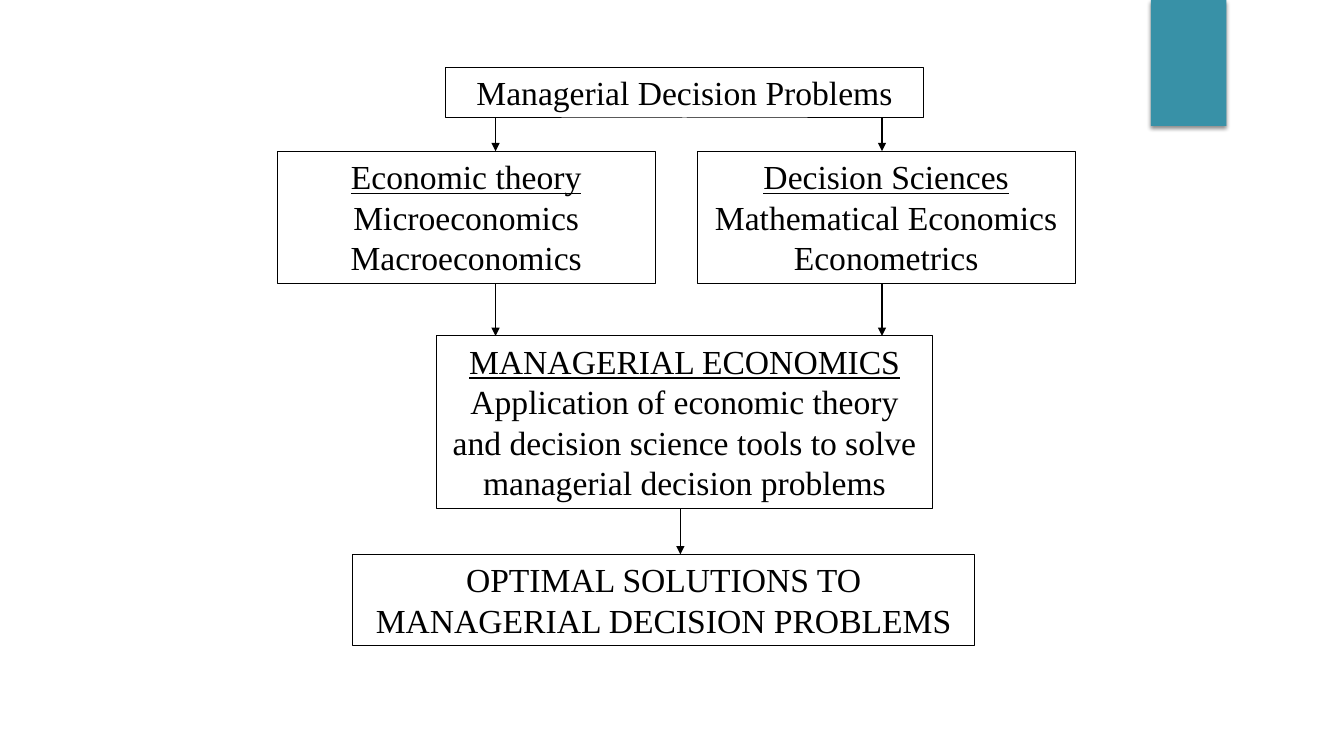
from dataclasses import dataclass

from lxml import etree
from pptx import Presentation
from pptx.dml.color import RGBColor
from pptx.enum.shapes import MSO_CONNECTOR, MSO_SHAPE
from pptx.enum.text import MSO_ANCHOR, MSO_AUTO_SIZE, PP_ALIGN
from pptx.oxml import parse_xml
from pptx.oxml.ns import nsdecls, qn
from pptx.slide import Slide
from pptx.util import Pt

RECTANGLE = MSO_SHAPE.RECTANGLE
STRAIGHT = MSO_CONNECTOR.STRAIGHT
CENTER = PP_ALIGN.CENTER
TOP = MSO_ANCHOR.TOP
FIT_SHAPE = MSO_AUTO_SIZE.SHAPE_TO_FIT_TEXT

BLACK = RGBColor(0x00, 0x00, 0x00)
WHITE = RGBColor(0xFF, 0xFF, 0xFF)
TEAL = RGBColor(0x38, 0x91, 0xA7)

FONT_NAME = "Times New Roman"
FONT_SIZE = 24
TEXT_LINE_HEIGHT = 29.1
BOX_PADDING = 7.2
BORDER_WIDTH = 0.75


@dataclass(frozen=True)
class FlowBox:
    left: float
    top: float
    width: float
    lines: tuple[str, ...]
    has_heading: bool = False


@dataclass(frozen=True)
class Arrow:
    x: float
    start: float
    end: float


BOXES = (
    FlowBox(318, 48, 342, ("Managerial Decision Problems",)),
    FlowBox(198, 108, 270,
            ("Economic theory", "Microeconomics", "Macroeconomics"), True),
    FlowBox(498, 108, 270,
            ("Decision Sciences", "Mathematical Economics", "Econometrics"), True),
    FlowBox(312, 240, 354,
            ("MANAGERIAL ECONOMICS", "Application of economic theory",
             "and decision science tools to solve",
             "managerial decision problems"), True),
    FlowBox(252, 396, 444,
            ("OPTIMAL SOLUTIONS TO", "MANAGERIAL DECISION PROBLEMS")),
)

ARROWS = (
    Arrow(354, 84, 108),
    Arrow(630, 84, 108),
    Arrow(354, 198, 240),
    Arrow(630, 198, 240),
    Arrow(486, 360, 396),
)


def draw_accent_bar(page: Slide) -> None:
    bar = page.shapes.add_shape(RECTANGLE, Pt(822), Pt(0), Pt(54), Pt(90))
    bar.fill.solid()
    bar.fill.fore_color.rgb = TEAL
    bar.line.fill.background()
    bar._element.spPr.append(parse_xml(
        f'<a:effectLst {nsdecls("a")}>'
        f'<a:outerShdw blurRad="{Pt(3)}" dist="{Pt(2)}" dir="5400000" rotWithShape="0">'
        '<a:srgbClr val="000000"><a:alpha val="45000"/></a:srgbClr>'
        '</a:outerShdw></a:effectLst>'))


def draw_arrow(page: Slide, arrow: Arrow) -> None:
    connector = page.shapes.add_connector(
        STRAIGHT, Pt(arrow.x), Pt(arrow.start), Pt(arrow.x), Pt(arrow.end))
    connector.line.color.rgb = BLACK
    connector.line.width = Pt(BORDER_WIDTH)
    etree.SubElement(connector.line._get_or_add_ln(), qn("a:tailEnd"), type="triangle")
    etree.SubElement(connector._element.spPr, qn("a:effectLst"))


def draw_box(page: Slide, flow_box: FlowBox) -> None:
    height = len(flow_box.lines) * TEXT_LINE_HEIGHT + BOX_PADDING
    box = page.shapes.add_shape(
        RECTANGLE, Pt(flow_box.left), Pt(flow_box.top), Pt(flow_box.width), Pt(height))
    box.shadow.inherit = False
    box.fill.solid()
    box.fill.fore_color.rgb = WHITE
    box.line.color.rgb = BLACK
    box.line.width = Pt(BORDER_WIDTH)

    frame = box.text_frame
    frame.word_wrap = True
    frame.auto_size = FIT_SHAPE
    frame.vertical_anchor = TOP
    para = frame.paragraphs[0]
    para.text = "\v".join(flow_box.lines)
    para.alignment = CENTER
    for span in para.runs:
        span.font.name = FONT_NAME
        span.font.size = Pt(FONT_SIZE)
        span.font.color.rgb = BLACK
    if flow_box.has_heading:
        para.runs[0].font.underline = True


def main() -> None:
    deck = Presentation()
    deck.slide_width = Pt(960)
    deck.slide_height = Pt(540)
    page = deck.slides.add_slide(deck.slide_layouts[6])
    draw_accent_bar(page)
    for arrow in ARROWS:
        draw_arrow(page, arrow)
    for flow_box in BOXES:
        draw_box(page, flow_box)
    deck.save("out.pptx")


if __name__ == "__main__":
    main()
